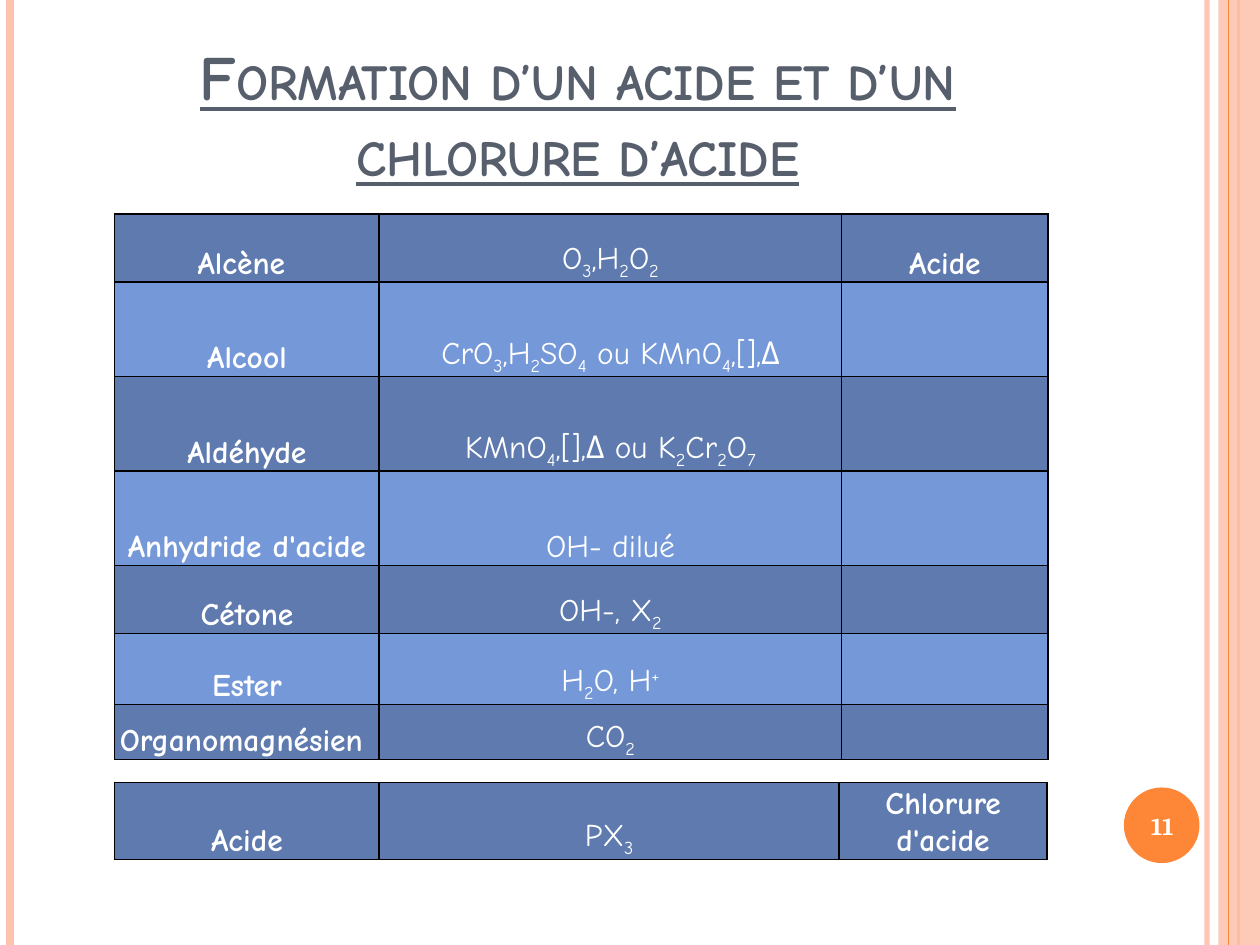
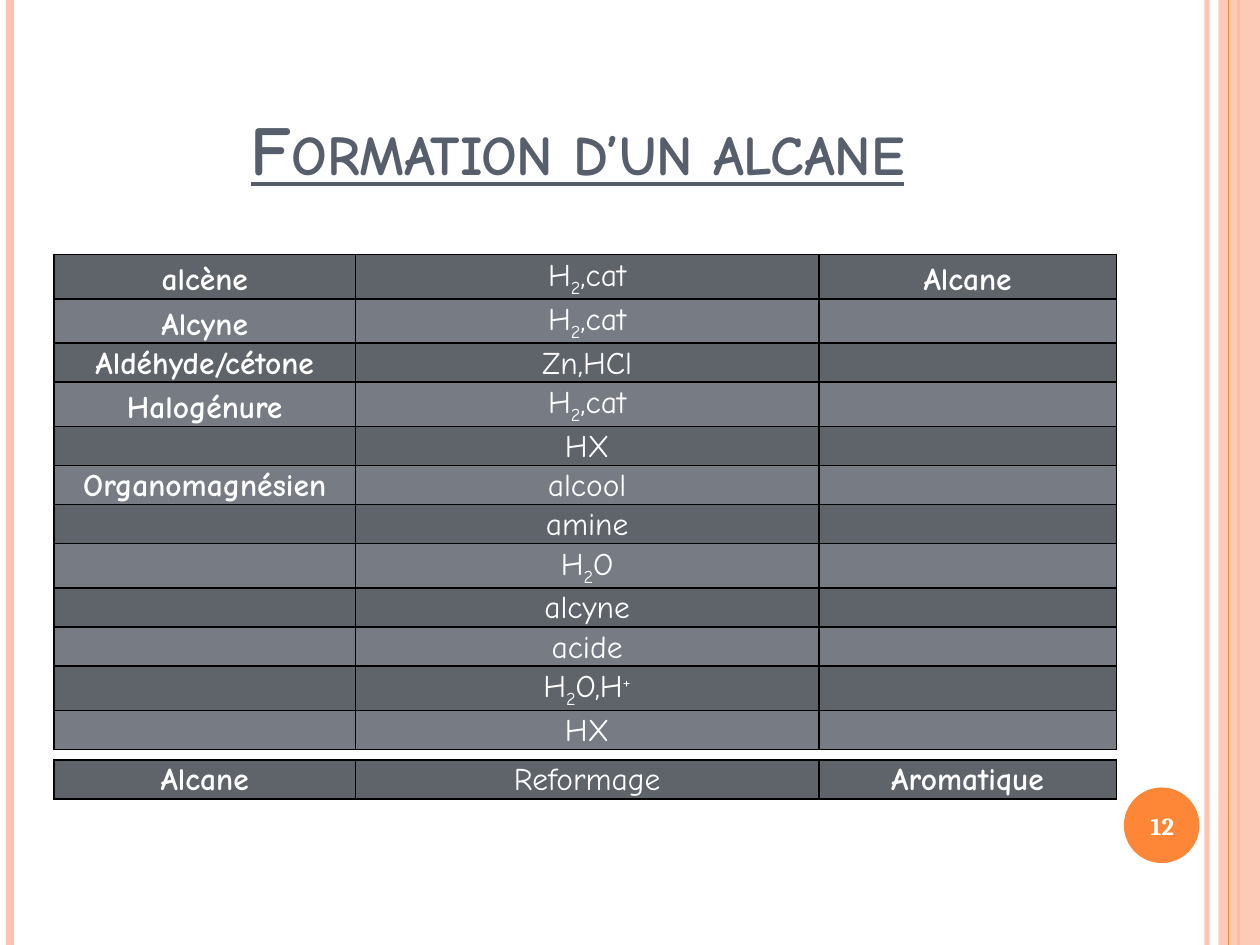
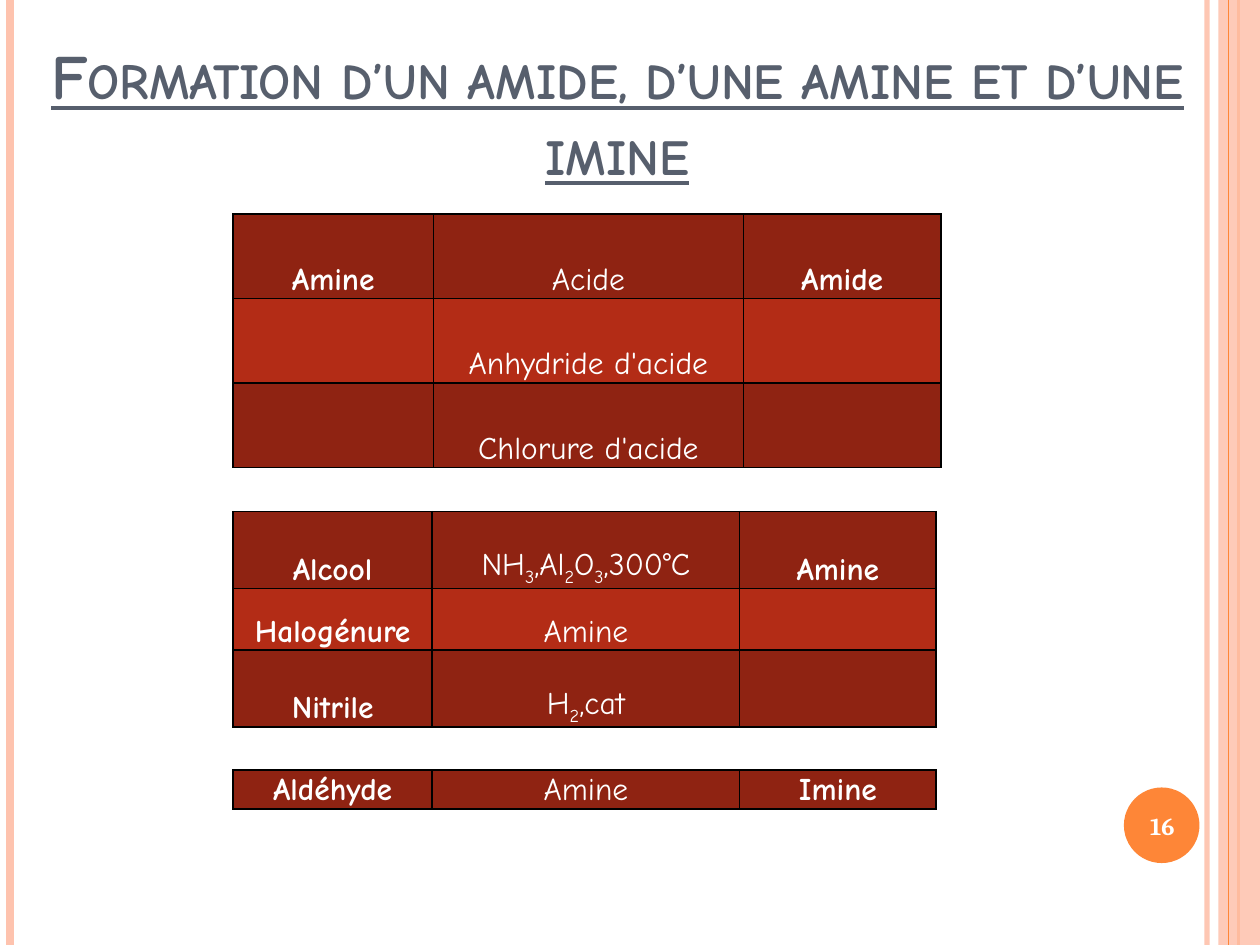
from lxml.etree import SubElement
from pptx import Presentation
from pptx.dml.color import RGBColor
from pptx.enum.shapes import MSO_CONNECTOR, MSO_SHAPE
from pptx.enum.text import MSO_ANCHOR, PP_ALIGN
from pptx.oxml.ns import qn
from pptx.util import Inches, Pt

COLORS = {
    "peach": "FEC3AE", "orange": "FE8637", "title": "575F6D",
    "white": "FFFFFF", "black": "000000",
    "blue": ("5E7AAE", "7598D9"),
    "grey": ("5F636A", "777C84"),
    "red": ("8F2312", "B32C16"),
}
TITLE_BOX = (0.5, 0.3, 8.17, 1.25)
TITLE_FORMAT = {"name": "Comic Neue", "bold": True, "underline": True}
NUMBER_FORMAT = {"name": "Cambria", "size": Pt(14), "bold": True}
CELL_FORMAT = {"name": "Comic Neue", "size": Pt(18)}
CELL_MARGINS = {"margin_left": Inches(0.01), "margin_right": Inches(0.01),
                "margin_top": Inches(0.01), "margin_bottom": 0}
BASELINES = {"_": "-25000", "^": "30000"}

# Each row: height, reactant, reagent, product; _ lowers and ^ raises the next sign
SLIDES = [
    {"number": 11, "title": "Formation d’un acide et d’un chlorure d’acide",
     "size": 36, "box": TITLE_BOX, "color": "blue", "tables": [
         (0.91, 1.7, (2.1, 3.67, 1.64), [
             (0.54, "Alcène ", "O_3,H_2O_2", "Acide"),
             (0.75, "Alcool", "CrO_3,H_2SO_4 ou KMnO_4,[],Δ", ""),
             (0.75, "Aldéhyde", "KMnO_4,[],Δ ou K_2Cr_2O_7", ""),
             (0.75, "Anhydride d'acide", "OH- dilué", ""),
             (0.54, "Cétone", "OH-, X_2", ""),
             (0.56, "Ester", "H_2O, H^+", ""),
             (0.44, "Organomagnésien ", "CO_2", "")]),
         (0.91, 6.21, (2.1, 3.65, 1.65), [
             (0.59, "Acide", "PX_3", "Chlorure d'acide")])]},
    {"number": 12, "title": "Formation d’un alcane",
     "size": 40, "box": TITLE_BOX, "color": "grey", "tables": [
         (0.43, 2.02, (2.39, 3.68, 2.36), [
             (0.33, "alcène", "H_2,cat", "Alcane"),
             (0.33, "Alcyne", "H_2,cat", ""),
             (0.3, "Aldéhyde/cétone", "Zn,HCl", ""),
             (0.33, "Halogénure", "H_2,cat", ""),
             (0.3, "", "HX", ""),
             (0.3, "Organomagnésien", "alcool", ""),
             (0.3, "", "amine", ""),
             (0.33, "", "H_2O", ""),
             (0.3, "", "alcyne", ""),
             (0.3, "", "acide", ""),
             (0.33, "", "H_2O,H^+", ""),
             (0.3, "", "HX", "")]),
         (0.43, 6.03, (2.39, 3.68, 2.36), [
             (0.3, "Alcane", "Reformage", "Aromatique")])]},
    {"number": 16, "title": "Formation d’un amide, d’une amine et d’une imine",
     "size": 36, "box": (0, 0.29, 9.8, 1.25), "color": "red", "tables": [
         (1.85, 1.7, (1.59, 2.46, 1.57), [
             (0.67, "Amine", "Acide", "Amide"),
             (0.67, "", "Anhydride d'acide", ""),
             (0.67, "", "Chlorure d'acide", "")]),
         (1.85, 4.06, (1.58, 2.44, 1.56), [
             (0.61, "Alcool", "NH_3,Al_2O_3,300°C", "Amine"),
             (0.49, "Halogénure", "Amine", ""),
             (0.61, "Nitrile", "H_2,cat", "")]),
         (1.85, 6.11, (1.58, 2.44, 1.56), [
             (0.3, "Aldéhyde", "Amine", "Imine")])]},
]


def rgb(value):
    return RGBColor.from_string(value)


def set_all(target, values):
    for name, value in values.items():
        setattr(target, name, value)


def set_alpha(element, percent):
    color = next(element.iter(qn("a:srgbClr")))
    SubElement(color, qn("a:alpha"), val=str(percent * 1000))


def add_span(para, text, values, color):
    span = para.add_run()
    span.text = text
    set_all(span.font, values)
    span.font.color.rgb = rgb(COLORS[color])
    return span


def add_text(page, box, anchor, text, values, color):
    frame = page.shapes.add_textbox(*map(Inches, box)).text_frame
    set_all(frame, {"word_wrap": True, "vertical_anchor": anchor})
    para = frame.paragraphs[0]
    para.alignment = PP_ALIGN.CENTER
    return add_span(para, text, values, color)


def add_rule(page, x, width, color, alpha=100):
    rule = page.shapes.add_connector(
        MSO_CONNECTOR.STRAIGHT, Inches(x), 0, Inches(x), Inches(7.5))
    rule.line.width = Pt(width)
    rule.line.color.rgb = rgb(COLORS[color])
    properties = rule._element.spPr
    if alpha < 100:
        set_alpha(properties, alpha)
    SubElement(properties, qn("a:effectLst"))


def add_block(page, kind, box, color):
    block = page.shapes.add_shape(kind, *map(Inches, box))
    block.shadow.inherit = False
    block.fill.solid()
    block.fill.fore_color.rgb = rgb(COLORS[color])
    block.line.fill.background()
    return block


def add_frame(page, number):
    # Side bands
    add_rule(page, 9.58, 3, "peach", 93)
    add_rule(page, 0.08, 4.5, "peach")
    add_rule(page, 9.83, 1.5, "orange")
    band = add_block(page, MSO_SHAPE.RECTANGLE, (9.67, 0, 0.33, 7.5), "peach")
    set_alpha(band._element.spPr, 87)
    add_rule(page, 9.75, 0.75, "orange")
    # Page number
    add_block(page, MSO_SHAPE.OVAL, (8.92, 6.25, 0.6, 0.6), "orange")
    add_text(page, (8.89, 6.27, 0.67, 0.57), MSO_ANCHOR.MIDDLE,
             str(number), NUMBER_FORMAT, "white")


def add_title(page, box, text, size):
    span = add_text(page, box, MSO_ANCHOR.BOTTOM, text,
                    {**TITLE_FORMAT, "size": Pt(size)}, "title")
    span.font._element.set("cap", "small")


def write_formula(para, formula, bold):
    values = {**CELL_FORMAT, "bold": bold}
    plain = ""
    signs = iter(formula)
    for sign in signs:
        if sign not in BASELINES:
            plain += sign
            continue
        if plain:
            add_span(para, plain, values, "white")
        span = add_span(para, next(signs), values, "white")
        span.font._element.set("baseline", BASELINES[sign])
        plain = ""
    if plain:
        add_span(para, plain, values, "white")


def format_cell(cell, fill):
    set_all(cell, {**CELL_MARGINS, "vertical_anchor": MSO_ANCHOR.BOTTOM})
    properties = cell._tc.get_or_add_tcPr()
    for side in ("lnL", "lnR", "lnT", "lnB"):
        border = SubElement(properties, qn(f"a:{side}"), w=str(Pt(1)))
        paint = SubElement(border, qn("a:solidFill"))
        SubElement(paint, qn("a:srgbClr"), val=COLORS["black"])
    cell.fill.solid()
    cell.fill.fore_color.rgb = rgb(fill)


def add_reactions(page, left, top, widths, rows, fills):
    heights = [row[0] for row in rows]
    table = page.shapes.add_table(
        len(rows), len(widths), Inches(left), Inches(top),
        Inches(sum(widths)), Inches(sum(heights))).table
    set_all(table, {"first_row": False, "horz_banding": False})
    for column, width in zip(table.columns, widths):
        column.width = Inches(width)
    for index, (height, *formulas) in enumerate(rows):
        table.rows[index].height = Inches(height)
        for place, formula in enumerate(formulas):
            cell = table.cell(index, place)
            format_cell(cell, fills[index % 2])
            para = cell.text_frame.paragraphs[0]
            para.alignment = PP_ALIGN.CENTER
            write_formula(para, formula, bold=place != 1)
            if not formula:
                # Keeps an empty cell from stretching its row
                SubElement(para._p, qn("a:endParaRPr"), sz="1000")


def main():
    deck = Presentation()
    set_all(deck, {"slide_width": Inches(10), "slide_height": Inches(7.5)})
    for content in SLIDES:
        page = deck.slides.add_slide(deck.slide_layouts[6])
        add_frame(page, content["number"])
        add_title(page, content["box"], content["title"], content["size"])
        for left, top, widths, rows in content["tables"]:
            add_reactions(page, left, top, widths, rows, COLORS[content["color"]])
    deck.save("out.pptx")


if __name__ == "__main__":
    main()
